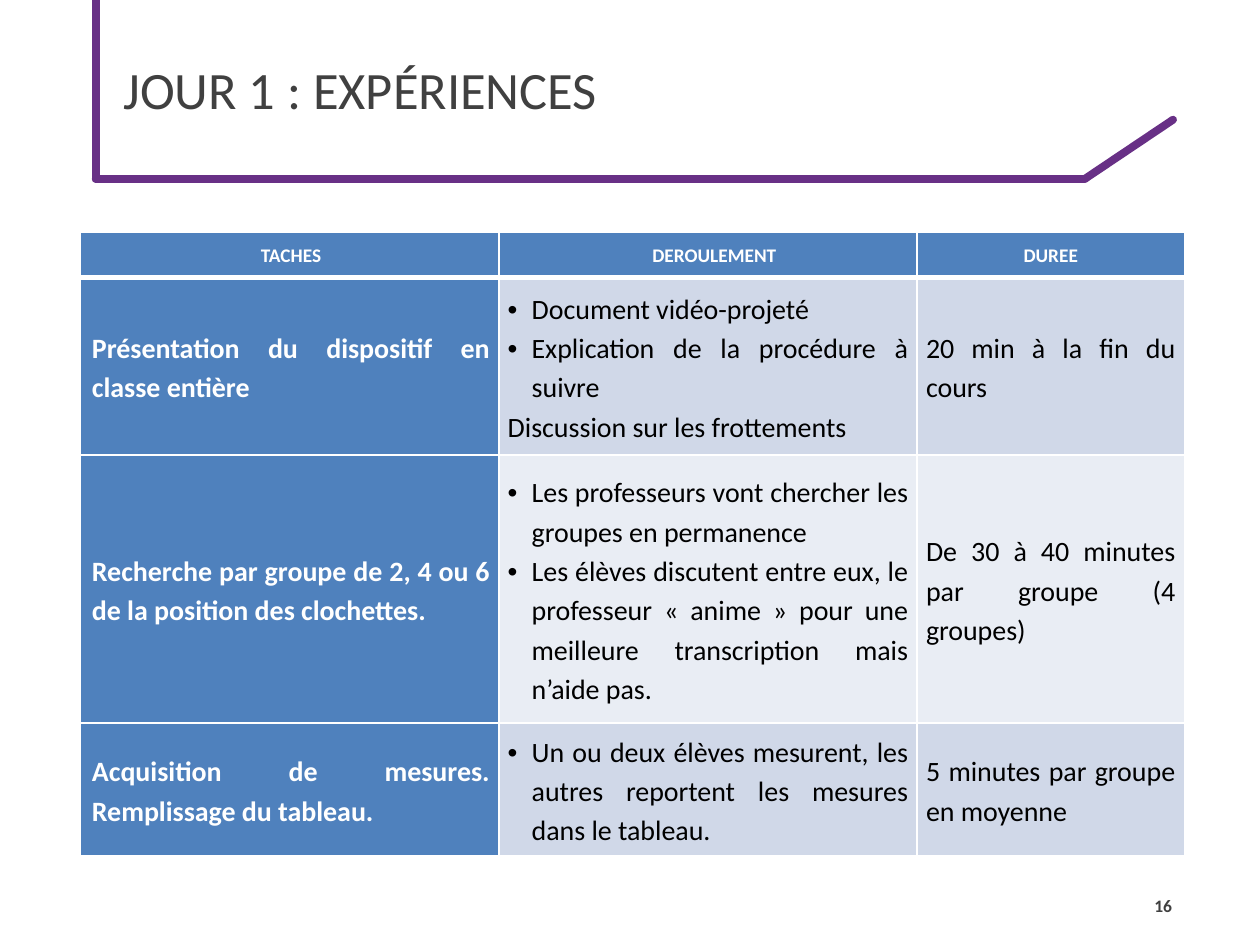
from dataclasses import dataclass

from lxml import etree
from pptx import Presentation
from pptx import util as u
from pptx.dml.color import RGBColor
from pptx.enum import shapes, text
from pptx.oxml.ns import qn


@dataclass(frozen=True)
class Theme:
    font: str = "Calibri"
    accent: str = "683086"
    ink: str = "404040"
    head: str = "4F81BD"
    bands: tuple = ("D0D8E8", "E9EDF4")
    white: str = "FFFFFF"
    black: str = "000000"
    title_size: int = 30
    head_size: int = 11
    body_size: int = 16
    number_size: int = 10
    rule_width: float = 4.5
    spacing: float = 1.15


THEME = Theme()
ALIGN = text.PP_ALIGN
BULLET = "• "
BULLET_INDENT = 0.19
COLUMNS = (3.32, 3.32, 2.12)
ROWS = (0.36, 1.41, 2.13, 1.05)
HEADINGS = (("TACHES", 0.02), ("DEROULEMENT", 0.1), ("DUREE", 0))
TASKS = (
    ("Présentation du dispositif en classe entière",
     ("• Document vidéo-projeté",
      "• Explication de la procédure à suivre",
      "Discussion sur les frottements"),
     "20 min à la fin du cours"),
    ("Recherche par groupe de 2, 4 ou 6 de la position des clochettes.",
     ("• Les professeurs vont chercher les groupes en permanence",
      "• Les élèves discutent entre eux, le professeur « anime » pour une "
      "meilleure transcription mais n’aide pas."),
     "De 30 à 40 minutes par groupe (4 groupes)"),
    ("Acquisition de mesures. Remplissage du tableau.",
     ("• Un ou deux élèves mesurent, les autres reportent les mesures "
      "dans le tableau.",),
     "5 minutes par groupe en moyenne"),
)


def write(para, words, size, color, bold=False, align=ALIGN.LEFT,
          spacing=None, indent=0):
    """Fill a paragraph; words that start with a bullet get a hanging one."""
    bulleted = words.startswith(BULLET)
    para.alignment = align
    if spacing:
        para.line_spacing = spacing
    props = para._p.get_or_add_pPr()
    props.set("marL", str(u.Inches(BULLET_INDENT if bulleted else indent)))
    props.set("indent", str(u.Inches(-BULLET_INDENT if bulleted else 0)))
    if bulleted:
        etree.SubElement(props, qn("a:buFont"), typeface="Arial")
        etree.SubElement(props, qn("a:buChar"), char=BULLET.strip())
    span = para.add_run()
    span.text = words.removeprefix(BULLET)
    span.font.name = THEME.font
    span.font.size = u.Pt(size)
    span.font.bold = bold
    span.font.color.rgb = RGBColor.from_string(color)


def add_rule(page, start, end):
    rule = page.shapes.add_connector(
        shapes.MSO_CONNECTOR.STRAIGHT, *map(u.Inches, start + end))
    rule.line.width = u.Pt(THEME.rule_width)
    rule.line.color.rgb = RGBColor.from_string(THEME.accent)
    props = rule._element.spPr
    props.find(qn("a:ln")).set("cap", "rnd")
    etree.SubElement(props, qn("a:effectLst"))


def add_frame_rules(page):
    corners = ((0.76, 0), (0.76, 1.42), (8.61, 1.42), (9.31, 0.95))
    for start, end in zip(corners, corners[1:]):
        add_rule(page, start, end)


def place_title(page, words):
    title = page.shapes.title
    title.left, title.top, title.width, title.height = map(
        u.Inches, (0.88, 0, 8.62, 1.41))
    title.text_frame.vertical_anchor = text.MSO_ANCHOR.MIDDLE
    write(title.text_frame.paragraphs[0], words, THEME.title_size, THEME.ink)


def add_borders(cell, bottom):
    props = cell._tc.get_or_add_tcPr()
    for side, width in (("L", 1), ("R", 1), ("T", 1), ("B", bottom)):
        line = etree.SubElement(props, qn(f"a:ln{side}"), w=str(u.Pt(width)))
        fill = etree.SubElement(line, qn("a:solidFill"))
        etree.SubElement(fill, qn("a:srgbClr"), val=THEME.white)


def fill_cell(cell, lines, fill, bottom=1, **style):
    add_borders(cell, bottom)
    cell.fill.solid()
    cell.fill.fore_color.rgb = RGBColor.from_string(fill)
    cell.vertical_anchor = text.MSO_ANCHOR.MIDDLE
    cell.margin_left = cell.margin_right = u.Inches(0.07)
    cell.margin_top = cell.margin_bottom = 0
    frame = cell.text_frame
    for index, words in enumerate(lines):
        para = frame.add_paragraph() if index else frame.paragraphs[0]
        write(para, words, spacing=THEME.spacing, **style)


def add_schedule(page):
    table = page.shapes.add_table(
        len(ROWS), len(COLUMNS), u.Inches(0.64), u.Inches(1.84),
        u.Inches(sum(COLUMNS)), u.Inches(sum(ROWS))).table
    table.horz_banding = False
    for column, width in zip(table.columns, COLUMNS):
        column.width = u.Inches(width)
    for row, height in zip(table.rows, ROWS):
        row.height = u.Inches(height)

    label = dict(color=THEME.white, bold=True)
    body = dict(size=THEME.body_size, align=ALIGN.JUSTIFY)
    for column, (heading, indent) in enumerate(HEADINGS):
        fill_cell(table.cell(0, column), [heading], THEME.head, bottom=3,
                  size=THEME.head_size, align=ALIGN.CENTER, indent=indent,
                  **label)
    for row, (task, steps, duration) in enumerate(TASKS, start=1):
        band = THEME.bands[(row - 1) % len(THEME.bands)]
        fill_cell(table.cell(row, 0), [task], THEME.head, indent=0.02,
                  **label, **body)
        for column, lines in ((1, steps), (2, [duration])):
            fill_cell(table.cell(row, column), lines, band,
                      color=THEME.black, **body)


def add_page_number(page, number):
    box = page.shapes.add_textbox(*map(u.Inches, (8.91, 6.99, 0.49, 0.4)))
    box.text_frame.word_wrap = True
    box.text_frame.vertical_anchor = text.MSO_ANCHOR.MIDDLE
    write(box.text_frame.paragraphs[0], number, THEME.number_size, THEME.ink,
          bold=True, align=ALIGN.RIGHT)


def main():
    deck = Presentation()
    deck.slide_width, deck.slide_height = u.Inches(10), u.Inches(7.5)
    page = deck.slides.add_slide(deck.slide_layouts.get_by_name("Title Only"))
    add_frame_rules(page)
    place_title(page, "JOUR 1 : EXPÉRIENCES")
    add_schedule(page)
    add_page_number(page, "16")
    deck.save("out.pptx")


if __name__ == "__main__":
    main()
